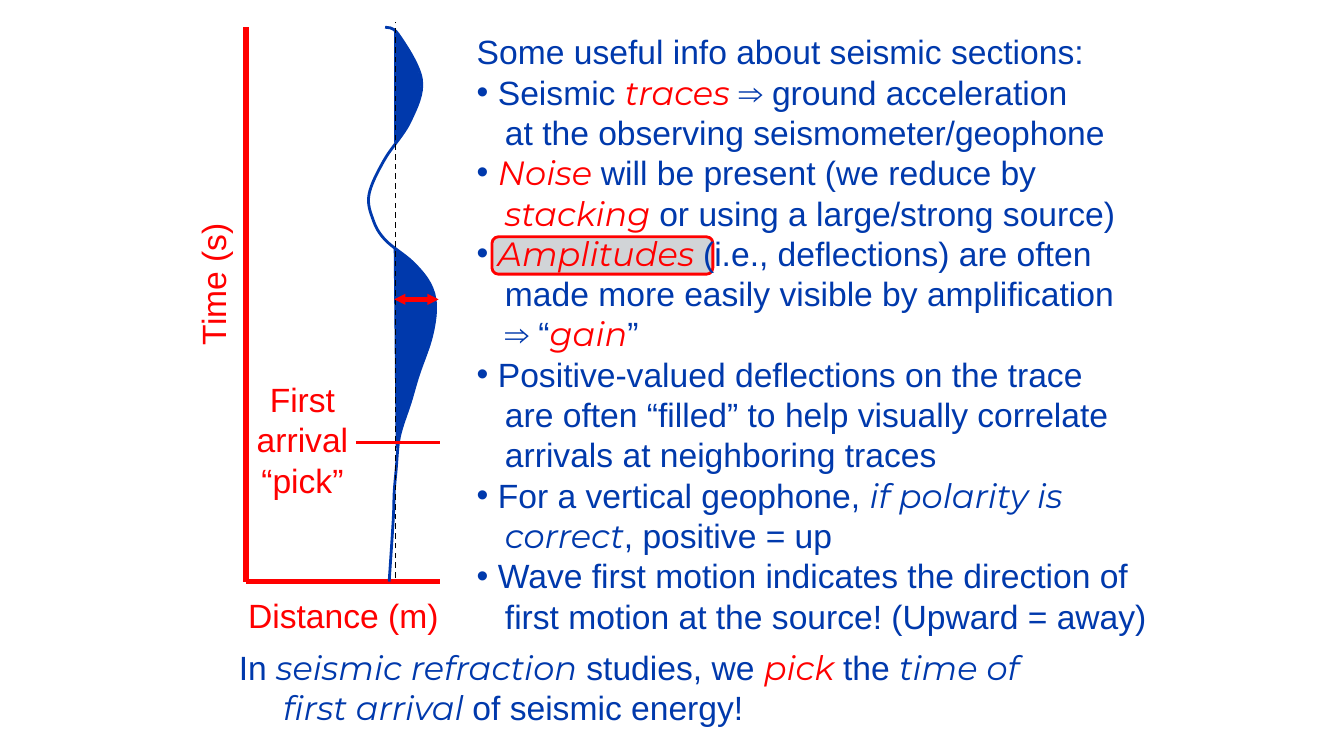
from lxml.etree import SubElement
from pptx import Presentation
from pptx.dml.color import RGBColor
from pptx.enum.dml import MSO_LINE
from pptx.enum.shapes import MSO_CONNECTOR, MSO_SHAPE
from pptx.enum.text import PP_ALIGN
from pptx.oxml.ns import qn
from pptx.util import Pt

PX = 9144
COLORS = {"blue": "0039AC", "red": "FF0000", "gray": "D1D4D7", "black": "000000"}
STYLES = {
    "plain": ("Arial", "blue", False),
    "label": ("Arial", "red", False),
    "term": ("Montserrat", "red", True),
    "stress": ("Montserrat", "blue", True),
}
BULLET, NEXT, CLOSING_INDENT = 21, 28, 44

INFO_LINES = [
    (0, ["Some useful info about seismic sections:"]),
    (BULLET, ["Seismic ", ("traces ", "term"), "⇒ ground acceleration"]),
    (NEXT, ["at the observing seismometer/geophone"]),
    (BULLET, [("Noise ", "term"), "will be present (we reduce by"]),
    (NEXT, [("stacking ", "term"), "or using a large/strong source)"]),
    (BULLET, [("Amplitudes ", "term"), "(i.e., deflections) are often"]),
    (NEXT, ["made more easily visible by amplification"]),
    (NEXT, ["⇒ “", ("gain", "term"), "”"]),
    (BULLET, ["Positive-valued deflections on the trace"]),
    (NEXT, ["are often “filled” to help visually correlate"]),
    (NEXT, ["arrivals at neighboring traces"]),
    (BULLET, ["For a vertical geophone, ", ("if polarity is", "stress")]),
    (NEXT, [("correct", "stress"), ", positive = up"]),
    (BULLET, ["Wave first motion indicates the direction of"]),
    (NEXT, ["first motion at the source! (Upward = away)"]),
]
CLOSING_LINES = [
    (0, ["In ", ("seismic refraction", "stress"), " studies, we ",
         ("pick ", "term"), "the ", ("time of", "stress")]),
    (CLOSING_INDENT, [("first arrival ", "stress"), "of seismic energy!"]),
]
TRACE = [
    (142, 550), (146, 489), (147, 461), (149, 438), (151, 414), (154, 399), (163, 372),
    (171, 345), (184, 307), (188, 276), (182, 254), (165, 233), (138, 211), (126, 191),
    (122, 166), (137, 132), (163, 93), (174, 52), (151, 7), (138, 0),
]
UPPER_FILL = [
    (147, 115), (157, 104), (168, 83), (172, 69), (174, 54), (170, 41), (161, 22),
    (152, 7), (147, 1),
]
LOWER_FILL = [
    (149, 417), (152, 406), (159, 380), (172, 339), (182, 316), (188, 287), (188, 269),
    (179, 249), (168, 236), (155, 226), (147, 219),
]


def rgb(name):
    return RGBColor.from_string(COLORS[name])


def set_font(font, style):
    font.name, color, font.italic = STYLES[style]
    font.color.rgb = rgb(color)


def add_bullet(properties):
    color = SubElement(properties, qn("a:buClr"))
    SubElement(color, qn("a:srgbClr"), val=COLORS["blue"])
    SubElement(properties, qn("a:buFont"), typeface="Arial")
    SubElement(properties, qn("a:buChar"), char="•")


def add_text(slide, box, lines, style="plain", align=PP_ALIGN.LEFT, wrap=True):
    shape = slide.shapes.add_textbox(*(value * PX for value in box))
    frame = shape.text_frame
    frame.word_wrap = wrap
    for index, (indent, pieces) in enumerate(lines):
        paragraph = frame.paragraphs[0] if index == 0 else frame.add_paragraph()
        paragraph.alignment = align
        properties = paragraph._p.get_or_add_pPr()
        properties.set("marL", str(indent * PX))
        if indent == BULLET:
            properties.set("indent", str(-indent * PX))
            add_bullet(properties)
        paragraph.font.size = Pt(24)
        set_font(paragraph.font, style)
        for piece in pieces:
            run = paragraph.add_run()
            if isinstance(piece, tuple):
                run.text, run_style = piece
                set_font(run.font, run_style)
            else:
                run.text = piece
    return shape


def add_line(slide, origin, start, end, color, width):
    left, top = origin
    points = [(left + x, top + y) for x, y in (start, end)]
    line = slide.shapes.add_connector(
        MSO_CONNECTOR.STRAIGHT, *(value * PX for point in points for value in point))
    line.line.color.rgb = rgb(color)
    line.line.width = Pt(width)
    SubElement(line._element.spPr, qn("a:effectLst"))
    return line


def add_outline(slide, origin, points, closed):
    left, top = origin
    vertices = [((left + x) * PX, (top + y) * PX) for x, y in points]
    builder = slide.shapes.build_freeform(*vertices[0])
    builder.add_line_segments(vertices[1:], close=closed)
    shape = builder.convert_to_shape()
    shape.shadow.inherit = False
    if closed:
        shape.fill.solid()
        shape.fill.fore_color.rgb = rgb("blue")
    else:
        shape.fill.background()
    shape.line.color.rgb = rgb("blue")
    return shape


def with_handles(points):
    padded = [points[0], *points, points[-1]]
    handles = [points[0]]
    for before, start, end, after in zip(padded, padded[1:], padded[2:], padded[3:]):
        handles.append(tuple(b + (c - a) / 6 for a, b, c in zip(before, start, end)))
        handles.append(tuple(c - (d - b) / 6 for b, c, d in zip(start, end, after)))
        handles.append(end)
    return handles


def add_curve(slide, origin, points):
    shape = add_outline(slide, origin, with_handles(points), False)
    segments = list(shape._element.iter(qn("a:lnTo")))
    outline = segments[0].getparent()
    for index in range(0, len(segments), 3):
        curve = SubElement(outline, qn("a:cubicBezTo"))
        for segment in segments[index:index + 3]:
            curve.append(segment[0])
            outline.remove(segment)
    return shape


def draw_info(slide, box):
    left, top, width, height = box
    highlight = slide.shapes.add_shape(
        MSO_SHAPE.ROUNDED_RECTANGLE,
        *(value * PX for value in (left + 25, top + 209, 219, 37)))
    highlight.shadow.inherit = False
    highlight.fill.solid()
    highlight.fill.fore_color.rgb = rgb("gray")
    highlight.line.color.rgb = rgb("red")
    highlight.line.width = Pt(2)
    add_text(slide, box, INFO_LINES)


def draw_seismogram(slide, box):
    left, top, width, height = box
    origin = left, top
    corner = 0, height
    add_line(slide, origin, corner, (0, 0), "red", 4)
    add_line(slide, origin, corner, (width, height), "red", 4)

    labels = [
        ((-104, 230, 142, 50), ["Time (s)"], 270),
        ((-8, height + 8, 209, 50), ["Distance (m)"], 0),
        ((-1, 344, 114, 131), ["First", "arrival", "“pick”"], 0),
    ]
    for (x, y, label_width, label_height), texts, rotation in labels:
        label = add_text(slide, (left + x, top + y, label_width, label_height),
                         [(0, [text]) for text in texts],
                         "label", PP_ALIGN.CENTER, wrap=False)
        label.rotation = rotation

    add_outline(slide, origin, UPPER_FILL, True).line.fill.background()
    add_outline(slide, origin, LOWER_FILL, True).line.width = Pt(0.75)
    add_curve(slide, origin, TRACE).line.width = Pt(2)

    baseline = add_line(slide, origin, (148, height - 4), (148, -5), "black", 1)
    baseline.line.dash_style = MSO_LINE.DASH
    add_line(slide, origin, (109, 412), (width, 412), "red", 2)
    amplitude = add_line(slide, origin, (147, 270), (191, 270), "red", 4)
    outline = amplitude.line._get_or_add_ln()
    for end in ("a:headEnd", "a:tailEnd"):
        SubElement(outline, qn(end), type="triangle", w="sm", len="sm")


def main():
    presentation = Presentation()
    presentation.slide_width = 1333 * PX
    presentation.slide_height = 750 * PX
    slide = presentation.slides.add_slide(presentation.slide_layouts[6])
    draw_info(slide, (463, 26, 691, 616))
    draw_seismogram(slide, (244, 27, 192, 550))
    add_text(slide, (227, 637, 861, 91), CLOSING_LINES)
    presentation.save("out.pptx")


if __name__ == "__main__":
    main()
